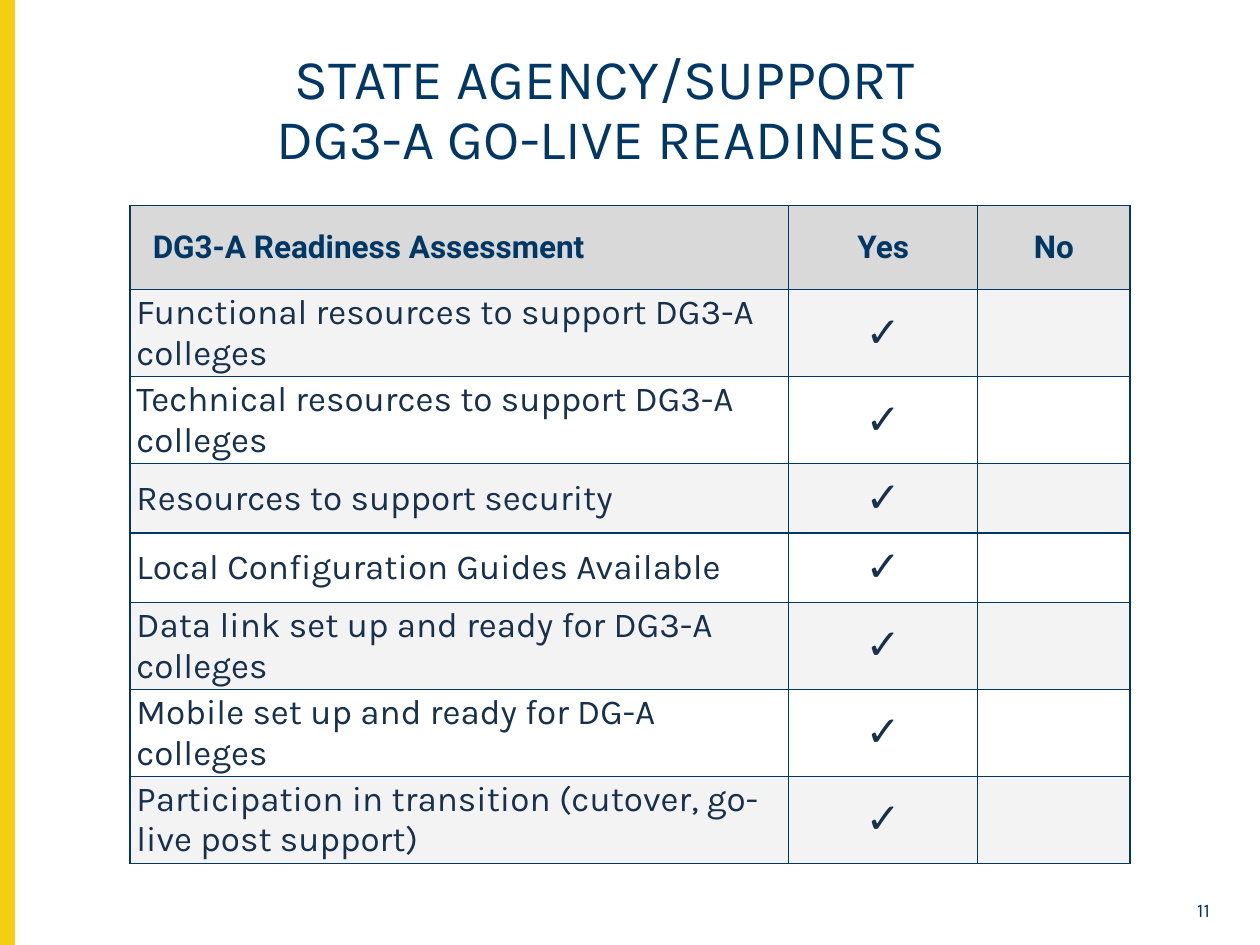
from pptx import Presentation
from pptx.dml.color import RGBColor
from pptx.enum.shapes import MSO_SHAPE
from pptx.enum.text import MSO_ANCHOR, MSO_AUTO_SIZE, PP_ALIGN
from pptx.oxml.ns import qn
from pptx.util import Cm, Pt
from lxml import etree

RECTANGLE = MSO_SHAPE.RECTANGLE
MIDDLE = MSO_ANCHOR.MIDDLE
NO_FIT = MSO_AUTO_SIZE.NONE
LEFT, CENTER, RIGHT = PP_ALIGN.LEFT, PP_ALIGN.CENTER, PP_ALIGN.RIGHT

CHECKLIST = [
    "Functional resources to support DG3-A colleges",
    "Technical resources to support DG3-A colleges",
    "Resources to support security",
    "Local Configuration Guides Available",
    "Data link set up and ready for DG3-A colleges",
    "Mobile set up and ready for DG-A colleges",
    "Participation in transition (cutover, go-live post support)",
]


def color(hex_string):
    """Turn a hex string into a colour."""
    return RGBColor.from_string(hex_string)


class ReadinessPage:
    """Hold the style and the current slide."""

    navy, ink, yellow = "003764", "17304C", "F4CE12"
    header_fill, band_fills = "D9D9D9", ("F3F3F3", "FFFFFF")
    body_font, header_font = "Karla", "Roboto"

    def __init__(self, deck):
        """Add a title-only slide to the deck."""
        self.page = deck.slides.add_slide(deck.slide_layouts[5])

    def set_text(self, frame, text, size, font, ink, align=LEFT, bold=False):
        """Set the text of a frame and format its runs."""
        frame.text = text
        for para in frame.paragraphs:
            para.alignment = align
            for span in para.runs:
                span.font.size = Pt(size)
                span.font.name = font
                span.font.bold = bold
                span.font.color.rgb = color(ink)

    def side_bar(self, width, height):
        """Draw the coloured bar along the left edge."""
        bar = self.page.shapes.add_shape(RECTANGLE, 0, 0, Cm(width), Cm(height))
        bar.shadow.inherit = False
        bar.fill.solid()
        bar.fill.fore_color.rgb = color(self.yellow)
        bar.line.color.rgb = color(self.yellow)
        bar.line.width = Pt(1)

    def title(self, text, left, top, width, height):
        """Place and format the title placeholder."""
        box = self.page.shapes.title
        box.left, box.top, box.width, box.height = map(Cm, (left, top, width, height))
        frame = box.text_frame
        self.set_text(frame, text, 32, self.body_font, self.navy, CENTER)
        frame.auto_size = NO_FIT
        frame.vertical_anchor = MIDDLE
        frame.paragraphs[0].line_spacing = 0.9

    def page_number(self, text, left, top, width, height):
        """Add the slide number."""
        box = self.page.shapes.add_textbox(*map(Cm, (left, top, width, height)))
        frame = box.text_frame
        frame.word_wrap = True
        frame.vertical_anchor = MIDDLE
        self.set_text(frame, text, 11, self.body_font, self.navy, RIGHT)

    def style_cell(self, cell, fill, left_margin):
        """Set margins, borders and fill of a cell."""
        cell.vertical_anchor = MIDDLE
        cell.margin_left, cell.margin_right = Cm(left_margin), Cm(0.08)
        cell.margin_top = cell.margin_bottom = Cm(0.05)
        properties = cell._tc.get_or_add_tcPr()
        for side in ("a:lnL", "a:lnR", "a:lnT", "a:lnB"):
            border = etree.SubElement(properties, qn(side), w=str(Pt(1)))
            solid = etree.SubElement(border, qn("a:solidFill"))
            etree.SubElement(solid, qn("a:srgbClr"), val=self.navy)
        cell.fill.solid()
        cell.fill.fore_color.rgb = color(fill)

    def table(self, headers, items, left, top, widths, heights):
        """Add the checklist table with a tick for each item."""
        frame = self.page.shapes.add_table(
            len(heights), len(widths), Cm(left), Cm(top), Cm(sum(widths)), Cm(sum(heights)))
        grid = frame.table
        for column, width in zip(grid.columns, widths):
            column.width = Cm(width)
        for row, height in zip(grid.rows, heights):
            row.height = Cm(height)
        rows = [headers] + [(item, "✓", "") for item in items]
        for row_index, texts in enumerate(rows):
            is_header = row_index == 0
            fill = self.header_fill if is_header else self.band_fills[(row_index - 1) % 2]
            font = self.header_font if is_header else self.body_font
            ink = self.navy if is_header else self.ink
            for column_index, text in enumerate(texts):
                cell = grid.cell(row_index, column_index)
                is_label = column_index == 0
                size = 18 if is_header else 20 if is_label else 24
                align = LEFT if is_label else CENTER
                self.style_cell(cell, fill, 0.13 if is_label else 0.08)
                self.set_text(cell.text_frame, text, size, font, ink, align, is_header)
        first = grid.cell(0, 0).text_frame.paragraphs[0]
        first._p.get_or_add_pPr().set("indent", str(Cm(0.33)))


def main():
    """Build the readiness slide."""
    deck = Presentation()
    deck.slide_width, deck.slide_height = Cm(25.4), Cm(19.05)
    readiness = ReadinessPage(deck)
    readiness.side_bar(0.28, 19.05)
    readiness.title("STATE AGENCY/SUPPORT \vDG3-A GO-LIVE READINESS", 1.73, 0.97, 21.2, 2.54)
    readiness.table(("DG3-A Readiness Assessment", "Yes", "No"), CHECKLIST,
                    2.62, 4.14, (13.28, 3.81, 3.07), [1.7, 1.52] + [1.4] * 6)
    readiness.page_number("11", 23.34, 18.01, 1.3, 0.66)
    deck.save("out.pptx")


if __name__ == "__main__":
    main()
